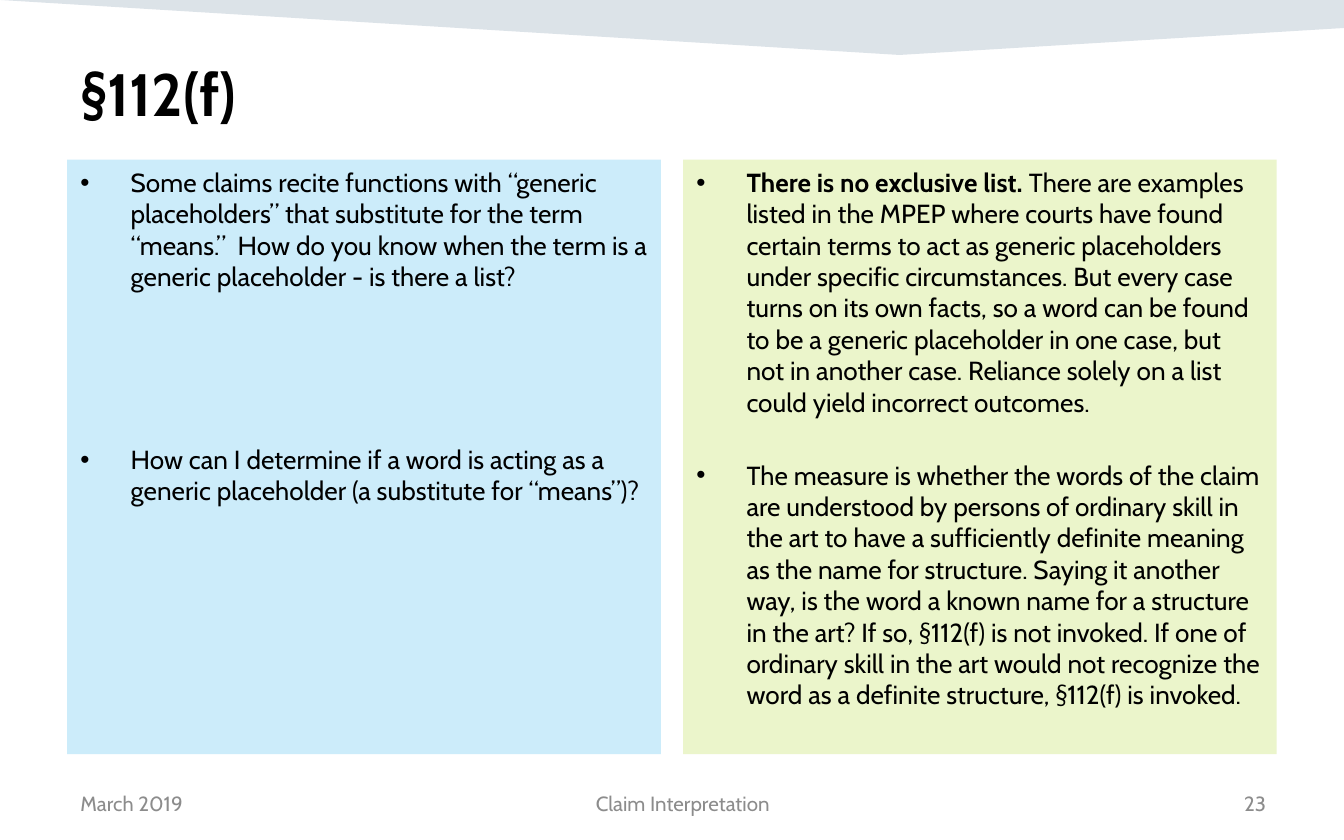
import pptx
import pptx.dml.color
import pptx.enum.shapes
import pptx.enum.text
import pptx.oxml
import pptx.oxml.ns
import pptx.util
from lxml import etree

Cm, Pt = pptx.util.Cm, pptx.util.Pt
ALIGN = pptx.enum.text.PP_ALIGN
ANCHOR = pptx.enum.text.MSO_ANCHOR
qn = pptx.oxml.ns.qn

COLORS = {
    "band": "164469",
    "question": "CCECFA",
    "answer": "EBF5CB",
    "text": "000000",
    "footer": "8C8C8C",
}
FONT = "Cabin"
MARGIN = 1.27
INDENT = Cm(0.95)


def add_run(p, text, size, color="text", bold=False):
    r = p.add_run()
    r.text = text
    r.font.name = FONT
    r.font.size = Pt(size)
    r.font.bold = bold
    r.font.color.rgb = pptx.dml.color.RGBColor.from_string(COLORS[color])


def add_label(left, top, width, height, text, size, color, align, bold=False):
    s = slide.shapes.add_textbox(Cm(left), Cm(top), Cm(width), Cm(height))
    tf = s.text_frame
    tf.word_wrap = True
    tf.vertical_anchor = ANCHOR.BOTTOM
    tf.paragraphs[0].alignment = align
    add_run(tf.paragraphs[0], text, size, color, bold)


prs = pptx.Presentation()
prs.slide_width, prs.slide_height = Cm(25.4), Cm(15.88)
slide = prs.slides.add_slide(prs.slide_layouts[6])

# Translucent band along the top edge
builder = slide.shapes.build_freeform(0, 0)
builder.add_line_segments(
    [(Cm(x), Cm(y)) for x, y in [(25.4, 0), (25.4, 0.53), (17, 1.04)]], close=True
)
band = builder.convert_to_shape()
band.shadow.inherit = False
band.line.fill.background()
band.fill.solid()
band.fill.fore_color.rgb = pptx.dml.color.RGBColor.from_string(COLORS["band"])
clr = band.fill._xPr.find(qn("a:solidFill")).find(qn("a:srgbClr"))
etree.SubElement(clr, qn("a:alpha")).set("val", "15000")

# Title
add_label(MARGIN, 1.04, 22.86, 1.52, "§112(f)", 32, "text", ALIGN.LEFT, bold=True)

# Question and answer panels: bullets are (space before in points, [(text, bold)])
panels = [
    ("question", [
        (0, [("Some claims recite functions with “generic placeholders” that substitute "
              "for the term “means.”  How do you know when the term is a generic "
              "placeholder - is there a list?", False)]),
        (81.2, [("How can I determine if a word is acting as a generic placeholder "
                 "(a substitute for “means”)?", False)]),
    ]),
    ("answer", [
        (0, [("There is no exclusive list. ", True),
             ("There are examples listed in the MPEP where courts have found certain "
              "terms to act as generic placeholders under specific circumstances. But "
              "every case turns on its own facts, so a word can be found to be a generic "
              "placeholder in one case, but not in another case. Reliance solely on a "
              "list could yield incorrect outcomes.", False)]),
        (22.4, [("The measure is whether the words of the claim are understood by persons "
                 "of ordinary skill in the art to have a sufficiently definite meaning as "
                 "the name for structure. Saying it another way, is the word a known name "
                 "for a structure in the art? If so, §112(f) is not invoked. If one of "
                 "ordinary skill in the art would not recognize the word as a definite "
                 "structure, §112(f) is invoked.", False)]),
    ]),
]
PANEL_W, PANEL_GAP = 11.22, 0.42
for i, (color, bullets) in enumerate(panels):
    sp = slide.shapes.add_shape(
        pptx.enum.shapes.MSO_SHAPE.RECTANGLE,
        Cm(MARGIN + i * (PANEL_W + PANEL_GAP)), Cm(3.02), Cm(PANEL_W), Cm(11.24),
    )
    sp.shadow.inherit = False
    sp.line.fill.background()
    sp.fill.solid()
    sp.fill.fore_color.rgb = pptx.dml.color.RGBColor.from_string(COLORS[color])
    tf = sp.text_frame
    tf.word_wrap = True
    tf.vertical_anchor = ANCHOR.TOP
    for n, (space, runs) in enumerate(bullets):
        p = tf.add_paragraph() if n else tf.paragraphs[0]
        p.alignment = ALIGN.LEFT
        p.space_before = Pt(space)
        pPr = p._p.get_or_add_pPr()
        pPr.set("marL", str(INDENT))
        pPr.set("indent", str(-INDENT))
        etree.SubElement(pPr, qn("a:buFont")).set("typeface", "Arial")
        etree.SubElement(pPr, qn("a:buChar")).set("char", "•")
        for text, bold in runs:
            add_run(p, text, 14, bold=bold)

# Footer: date, title, slide number
for left, width, text, align in [
    (MARGIN, 3.84, "March 2019", ALIGN.LEFT),
    (5.26, 15.29, "Claim Interpretation", ALIGN.CENTER),
    (20.75, 3.43, "23", ALIGN.RIGHT),
]:
    add_label(left, 14.71, width, 0.84, text, 11, "footer", align)

prs.save("out.pptx")
